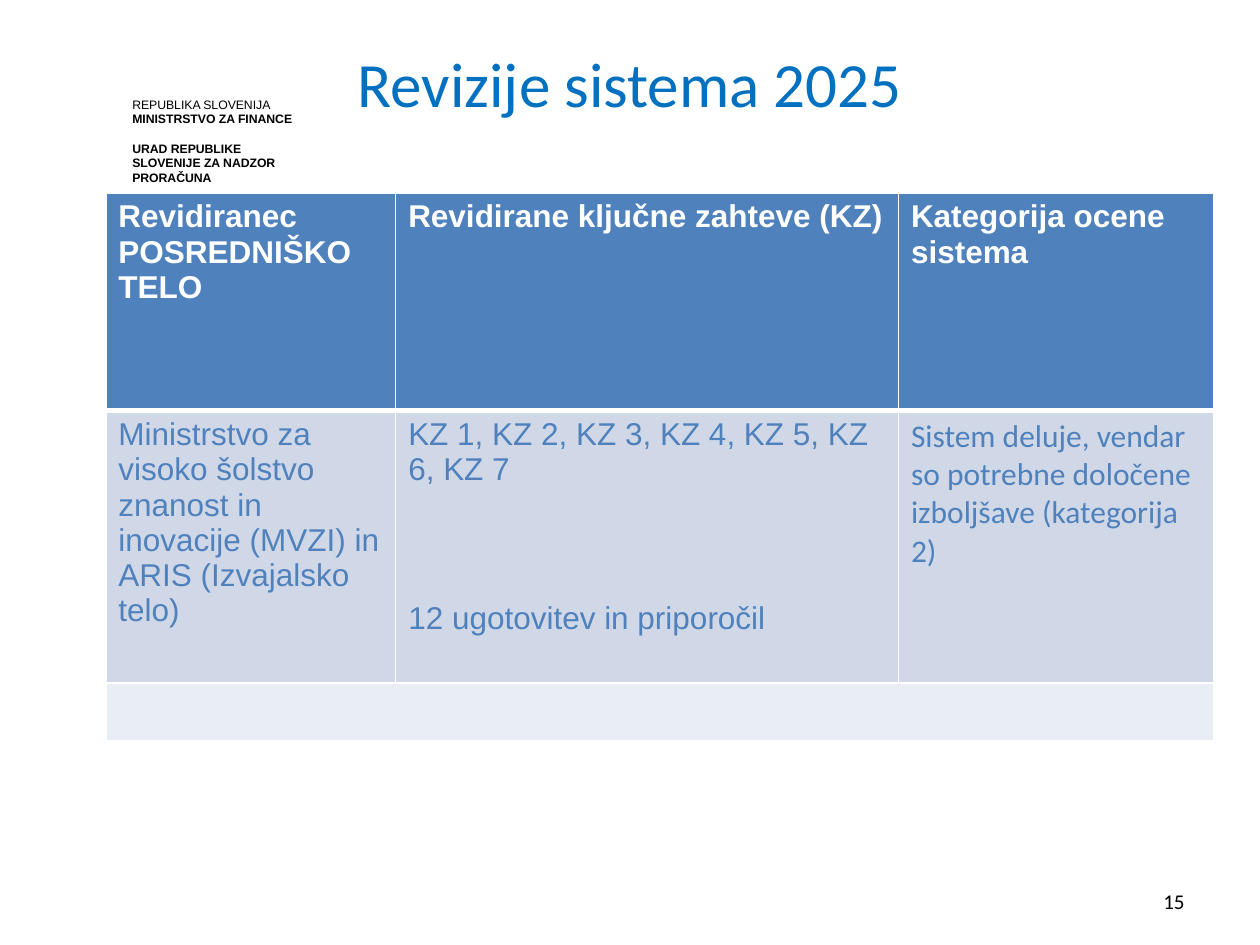
from pptx import Presentation
from pptx.dml.color import RGBColor
from pptx.enum.text import MSO_ANCHOR, PP_ALIGN
from pptx.oxml.ns import qn
from pptx.util import Pt
from lxml import etree

LEFT, CENTER, RIGHT = PP_ALIGN.LEFT, PP_ALIGN.CENTER, PP_ALIGN.RIGHT
TOP, MIDDLE = MSO_ANCHOR.TOP, MSO_ANCHOR.MIDDLE

COLORS = {
    "title": "0070C0",
    "black": "000000",
    "white": "FFFFFF",
    "blue": "4F81BD",
    "band": "D0D8E8",
    "light_band": "E9EDF4",
}

COLUMN_WIDTHS = (165.6, 287.3, 180)
ROW_HEIGHTS = (124.5, 155.5, 33)
HEADINGS = (
    ("Revidiranec", "POSREDNIŠKO TELO"),
    ("Revidirane ključne zahteve (KZ)",),
    ("Kategorija ocene sistema",),
)
FINDINGS = (
    ("Ministrstvo za visoko šolstvo znanost in inovacije (MVZI) in ARIS (Izvajalsko telo)",),
    ("KZ 1, KZ 2, KZ 3, KZ 4, KZ 5, KZ 6, KZ 7", "12 ugotovitev in priporočil"),
    ("Sistem deluje, vendar so potrebne določene izboljšave (kategorija 2)",),
)
FINDING_FONTS = ("Arial", "Arial", "Calibri")


def color(name):
    return RGBColor.from_string(COLORS[name])


def style(para, size, font, color_name, bold=False):
    para.font.size = Pt(size)
    para.font.name = font
    para.font.bold = bold
    para.font.color.rgb = color(color_name)


def write_lines(frame, lines, size, font, color_name, bold=False):
    for index, line in enumerate(lines):
        para = frame.add_paragraph() if index else frame.paragraphs[0]
        para.text = line
        style(para, size, font, color_name, bold)


def add_text(page, bounds, lines, size, font, color_name, align=LEFT, anchor=TOP):
    box = page.shapes.add_textbox(*(Pt(length) for length in bounds))
    frame = box.text_frame
    frame.word_wrap = True
    frame.vertical_anchor = anchor
    write_lines(frame, lines, size, font, color_name)
    for para in frame.paragraphs:
        para.alignment = align
    return frame


def add_letterhead(page):
    lines = (
        "REPUBLIKA SLOVENIJA",
        "MINISTRSTVO ZA FINANCE",
        "URAD REPUBLIKE SLOVENIJE ZA NADZOR PRORAČUNA",
    )
    frame = add_text(page, (75.6, 55.4, 95, 42), lines, 7, "Arial", "black")
    frame.margin_left = frame.margin_top = frame.margin_right = frame.margin_bottom = 0
    for para in frame.paragraphs:
        para.line_spacing = Pt(8.4)
    for para in frame.paragraphs[1:]:
        para.font.bold = True
    frame.paragraphs[2].space_before = Pt(8.4)


def set_borders(cell, bottom_width):
    properties = cell._tc.get_or_add_tcPr()
    widths = {"a:lnL": 1, "a:lnR": 1, "a:lnT": 1, "a:lnB": bottom_width}
    for position, (tag, width) in enumerate(widths.items()):
        line = etree.Element(qn(tag), w=str(Pt(width)))
        fill = etree.SubElement(line, qn("a:solidFill"))
        etree.SubElement(fill, qn("a:srgbClr"), val=COLORS["white"])
        properties.insert(position, line)


def fill_cell(cell, fill_name, bottom_width=1):
    cell.fill.solid()
    cell.fill.fore_color.rgb = color(fill_name)
    set_borders(cell, bottom_width)


def add_audit_table(page):
    frame = page.shapes.add_table(
        len(ROW_HEIGHTS), len(COLUMN_WIDTHS), Pt(60.5), Pt(110.2),
        Pt(sum(COLUMN_WIDTHS)), Pt(sum(ROW_HEIGHTS)))
    table = frame.table
    for column, width in zip(table.columns, COLUMN_WIDTHS):
        column.width = Pt(width)
    for row, height in zip(table.rows, ROW_HEIGHTS):
        row.height = Pt(height)

    for index, (heading, finding, font) in enumerate(zip(HEADINGS, FINDINGS, FINDING_FONTS)):
        head, body, foot = (table.cell(row, index) for row in range(3))
        fill_cell(head, "blue", 3)
        write_lines(head.text_frame, heading, 18, "Arial", "white", True)
        fill_cell(body, "band")
        write_lines(body.text_frame, finding, 18, font, "blue")
        fill_cell(foot, "light_band")
    table.cell(1, 1).text_frame.paragraphs[1].space_before = Pt(65)
    table.cell(2, 0).merge(table.cell(2, 2))


def main():
    deck = Presentation()
    deck.slide_width, deck.slide_height = Pt(720), Pt(540)
    page = deck.slides.add_slide(deck.slide_layouts[6])
    add_letterhead(page)
    add_text(page, (36, 21.6, 648, 90), ("Revizije sistema 2025",),
             36, "Calibri", "title", CENTER)
    add_text(page, (516, 500.5, 168, 28.8), ("15",),
             12, "Calibri", "black", RIGHT, MIDDLE)
    add_audit_table(page)
    deck.save("out.pptx")


if __name__ == "__main__":
    main()
